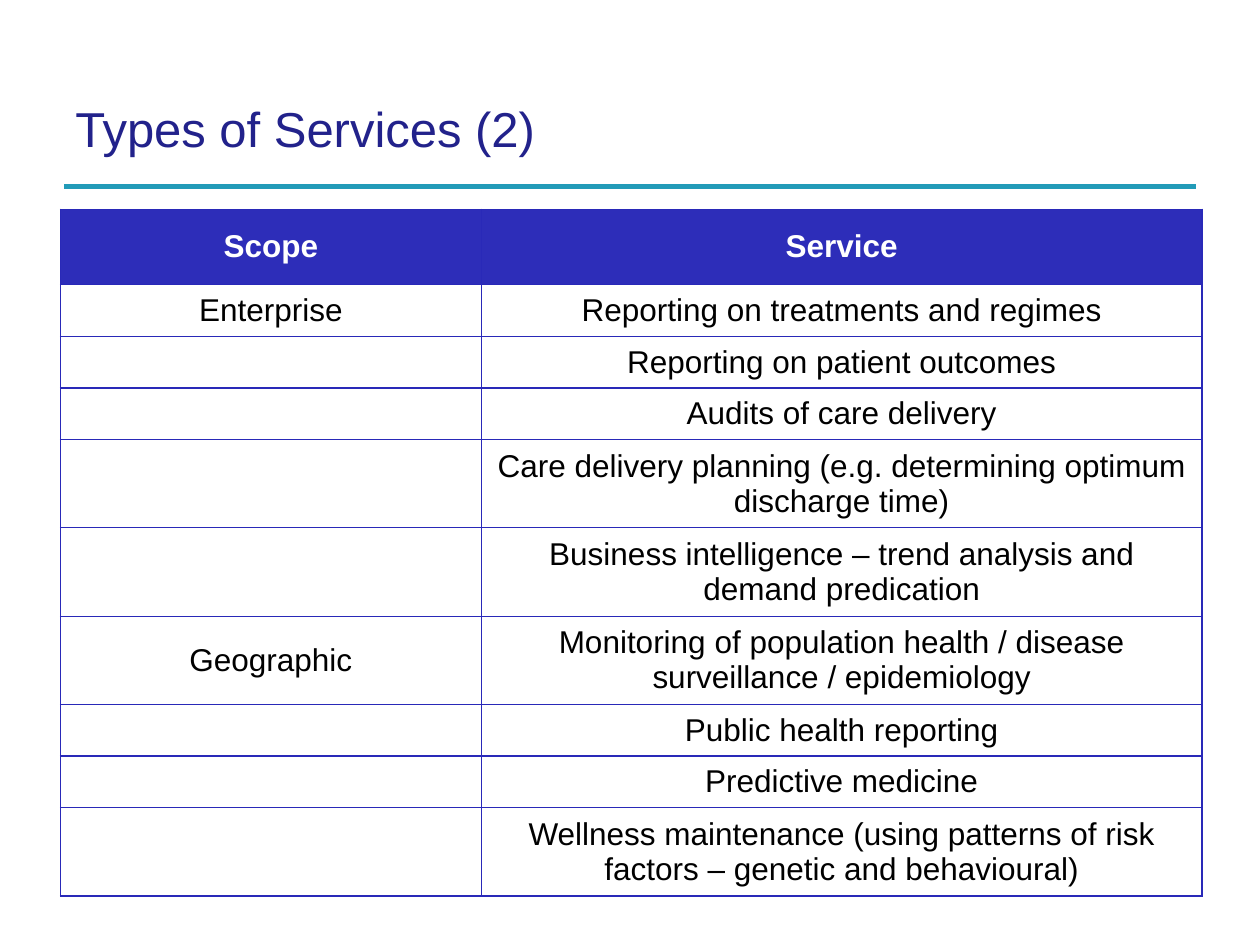
import pptx
import pptx.dml.color
import pptx.enum.shapes
import pptx.enum.text
import pptx.oxml
import pptx.oxml.ns
import pptx.util
from dataclasses import dataclass


@dataclass(frozen=True)
class Theme:
    font: str = "Arial"
    title_size: int = 28
    table_size: int = 18
    title: str = "22228B"
    rule: str = "229BB8"
    header: str = "2D2DB9"
    border: str = "2929B8"
    header_text: str = "FFFFFF"
    body_text: str = "000000"


theme = Theme()
Inches = pptx.util.Inches


def style_font(font, size, color, bold=False):
    font.name = theme.font
    font.size = pptx.util.Pt(size)
    font.bold = bold
    font.color.rgb = pptx.dml.color.RGBColor.from_string(color)


def add_borders(cell):
    properties = cell._tc.get_or_add_tcPr()
    for side in ("lnL", "lnR", "lnT", "lnB"):
        properties.append(pptx.oxml.parse_xml(
            f'<a:{side} {pptx.oxml.ns.nsdecls("a")} w="{pptx.util.Pt(0.75)}">'
            f'<a:solidFill><a:srgbClr val="{theme.border}"/></a:solidFill></a:{side}>'))


presentation = pptx.Presentation()
presentation.slide_width = Inches(10)
presentation.slide_height = Inches(7.5)
slide = presentation.slides.add_slide(presentation.slide_layouts[6])

# Rule under the title
rule = slide.shapes.add_connector(
    pptx.enum.shapes.MSO_CONNECTOR.STRAIGHT,
    Inches(0.51), Inches(1.48), Inches(9.49), Inches(1.48))
rule.line.color.rgb = pptx.dml.color.RGBColor.from_string(theme.rule)
rule.line.width = pptx.util.Pt(3)
rule._element.spPr.append(
    pptx.oxml.parse_xml(f'<a:effectLst {pptx.oxml.ns.nsdecls("a")}/>'))

# Title
title = slide.shapes.add_textbox(Inches(0.5), Inches(0.7), Inches(9), Inches(0.63))
title.text_frame.word_wrap = True
title.text_frame.vertical_anchor = pptx.enum.text.MSO_ANCHOR.MIDDLE
paragraph = title.text_frame.paragraphs[0]
paragraph.text = "Types of Services (2)"
style_font(paragraph.font, theme.title_size, theme.title)

# Services by scope; rows with two lines grow to fit
rows = [
    ("Scope", "Service"),
    ("Enterprise", "Reporting on treatments and regimes"),
    ("", "Reporting on patient outcomes"),
    ("", "Audits of care delivery"),
    ("", "Care delivery planning (e.g. determining optimum discharge time)"),
    ("", "Business intelligence – trend analysis and demand predication"),
    ("Geographic", "Monitoring of population health / disease surveillance / epidemiology"),
    ("", "Public health reporting"),
    ("", "Predictive medicine"),
    ("", "Wellness maintenance (using patterns of risk factors – genetic and behavioural)"),
]
column_widths = (3.34, 5.72)
header_height, body_height = 0.6, 0.41

table = slide.shapes.add_table(
    len(rows), len(column_widths), Inches(0.48), Inches(1.66),
    Inches(sum(column_widths)),
    Inches(header_height + body_height * (len(rows) - 1))).table
table.first_row = False
table.horz_banding = False
for column, width in zip(table.columns, column_widths):
    column.width = Inches(width)

for row_index, texts in enumerate(rows):
    is_header = row_index == 0
    table.rows[row_index].height = Inches(header_height if is_header else body_height)
    for column_index, text in enumerate(texts):
        cell = table.cell(row_index, column_index)
        cell.vertical_anchor = pptx.enum.text.MSO_ANCHOR.MIDDLE
        add_borders(cell)
        if is_header:
            cell.fill.solid()
            cell.fill.fore_color.rgb = pptx.dml.color.RGBColor.from_string(theme.header)
        else:
            cell.fill.background()
        paragraph = cell.text_frame.paragraphs[0]
        paragraph.text = text
        paragraph.alignment = pptx.enum.text.PP_ALIGN.CENTER
        style_font(paragraph.font, theme.table_size,
                   theme.header_text if is_header else theme.body_text, is_header)

presentation.save("out.pptx")
